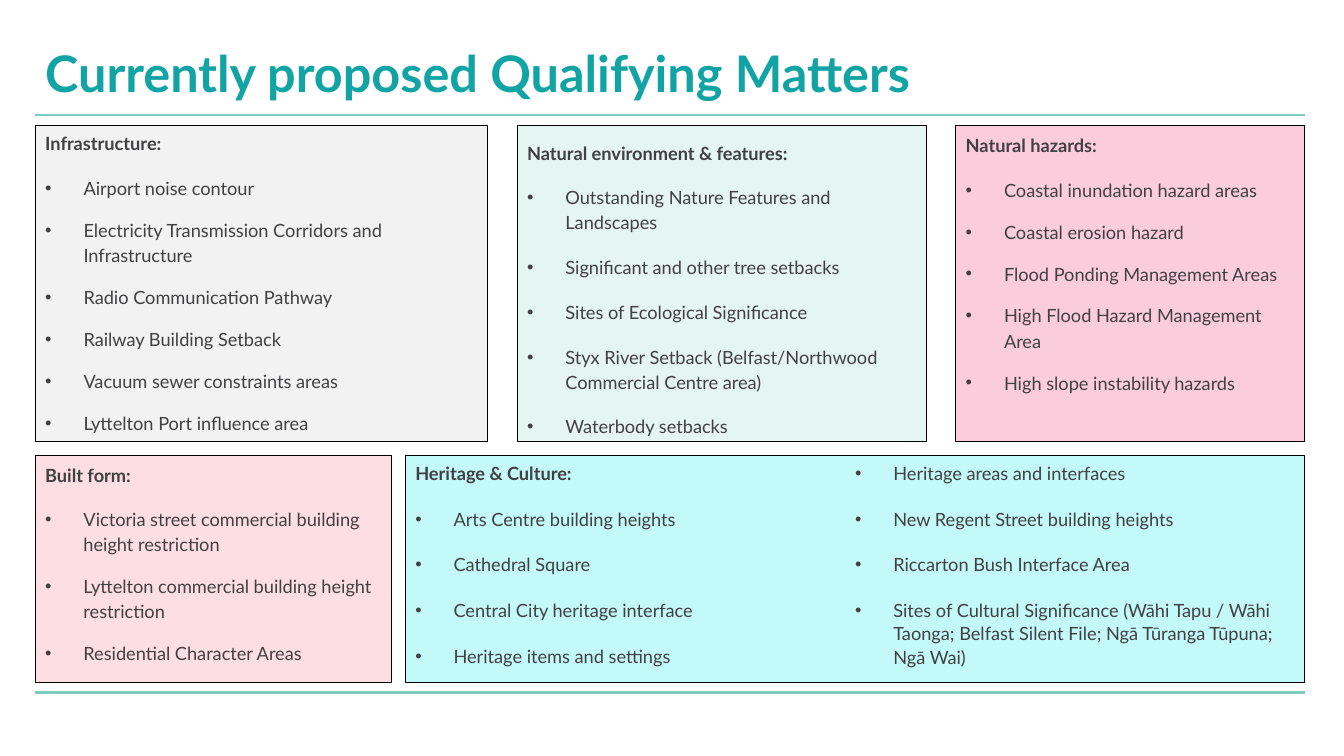
from dataclasses import dataclass

from lxml import etree
from pptx import Presentation
from pptx import util as u
from pptx.dml import color
from pptx.enum import shapes, text
from pptx.oxml import ns

PX = 9144  # EMU per px, 100 px to the inch
LEFT, RIGHT = 35, 1294
TOP_ROW, TOP_HEIGHT = 125, 313
LOW_ROW, LOW_HEIGHT = 452, 225
RULE_YS = (114, 687)
INDENT = 38
COLOURS = {
    "rule": "7CCCBF", "title": "12A4A4", "body": "414042", "border": "000000",
    "infrastructure": "F2F2F2", "environment": "E5F5F2", "hazards": "FBCDDC",
    "built": "FCDEE3", "heritage": "C4F9F9",
}


@dataclass(frozen=True)
class Panel:
    heading: str
    matters: tuple[str, ...]
    fill: str
    left: int
    top: int
    width: int
    height: int
    heading_spacing: float = 1.15
    matter_spacing: float = 1.15
    before: int = 6
    after: int = 6
    columns: int = 1


PANELS = (
    Panel("Infrastructure:", (
        "Airport noise contour",
        "Electricity Transmission Corridors and Infrastructure",
        "Radio Communication Pathway",
        "Railway Building Setback",
        "Vacuum sewer constraints areas",
        "Lyttelton Port influence area",
    ), "infrastructure", LEFT, TOP_ROW, 449, TOP_HEIGHT, heading_spacing=1.07),
    Panel("Natural environment & features:", (
        "Outstanding Nature Features and Landscapes",
        "Significant and other tree setbacks",
        "Sites of Ecological Significance",
        "Styx River Setback (Belfast/Northwood Commercial Centre area)",
        "Waterbody setbacks",
    ), "environment", 513, TOP_ROW, 406, TOP_HEIGHT, heading_spacing=1.5, after=8),
    Panel("Natural hazards:", (
        "Coastal inundation hazard areas",
        "Coastal erosion hazard",
        "Flood Ponding Management Areas",
        "High Flood Hazard Management Area",
        "High slope instability hazards",
    ), "hazards", 948, TOP_ROW, 346, TOP_HEIGHT),
    Panel("Built form:", (
        "Victoria street commercial building height restriction",
        "Lyttelton commercial building height restriction",
        "Residential Character Areas",
    ), "built", LEFT, LOW_ROW, 353, LOW_HEIGHT),
    Panel("Heritage & Culture:", (
        "Arts Centre building heights",
        "Cathedral Square",
        "Central City heritage interface",
        "Heritage items and settings",
        "Heritage areas and interfaces",
        "New Regent Street building heights",
        "Riccarton Bush Interface Area",
        "Sites of Cultural Significance (Wāhi Tapu / Wāhi Taonga; "
        "Belfast Silent File; Ngā Tūranga Tūpuna; Ngā Wai)",
    ), "heritage", 402, LOW_ROW, 892, LOW_HEIGHT, heading_spacing=1.07,
        matter_spacing=1.07, before=8, after=8, columns=2),
)


def emu(*lengths: int) -> list[int]:
    return [length * PX for length in lengths]


def rgb(name: str) -> color.RGBColor:
    return color.RGBColor.from_string(COLOURS[name])


def apply(target, formats: dict) -> None:
    for attribute, value in formats.items():
        setattr(target, attribute, value)


def write(paragraph, wording: str, size: int, colour: str, bold: bool, spacing: dict) -> None:
    apply(paragraph, {"alignment": text.PP_ALIGN.LEFT, **spacing})
    run = paragraph.add_run()
    run.text = wording
    apply(run.font, {"name": "Lato", "size": u.Pt(size), "bold": bold})
    run.font.color.rgb = rgb(colour)


def add_bullet(paragraph) -> None:
    properties = paragraph._p.get_or_add_pPr()
    properties.set("marL", str(INDENT * PX))
    properties.set("indent", str(-INDENT * PX))
    etree.SubElement(properties, ns.qn("a:buFont")).set("typeface", "Arial")
    etree.SubElement(properties, ns.qn("a:buChar")).set("char", "•")


def add_rule(slide, y: int) -> None:
    rule = slide.shapes.add_connector(shapes.MSO_CONNECTOR.STRAIGHT, *emu(LEFT, y, RIGHT, y))
    rule.line.color.rgb = rgb("rule")
    rule.line.width = u.Pt(1.5)
    etree.SubElement(rule._element.spPr, ns.qn("a:effectLst"))


def add_title(slide, wording: str) -> None:
    frame = slide.shapes.add_textbox(*emu(LEFT, 40, 1260, 72)).text_frame
    apply(frame, {"word_wrap": True, "vertical_anchor": text.MSO_ANCHOR.MIDDLE})
    write(frame.paragraphs[0], wording, 36, "title", True, {"line_spacing": 0.9})


def add_panel(slide, panel: Panel) -> None:
    box = slide.shapes.add_shape(
        shapes.MSO_SHAPE.RECTANGLE, *emu(panel.left, panel.top, panel.width, panel.height))
    box.shadow.inherit = False
    box.fill.solid()
    box.fill.fore_color.rgb = rgb(panel.fill)
    box.line.color.rgb = rgb("border")
    box.line.width = u.Pt(0.75)
    frame = box.text_frame
    apply(frame, {"word_wrap": True, "vertical_anchor": text.MSO_ANCHOR.TOP})
    if panel.columns > 1:
        frame._txBody.bodyPr.set("numCol", str(panel.columns))
    write(frame.paragraphs[0], panel.heading, 13, "body", True,
          {"line_spacing": panel.heading_spacing, "space_after": u.Pt(8)})
    matter_format = {"line_spacing": panel.matter_spacing,
                     "space_before": u.Pt(panel.before), "space_after": u.Pt(panel.after)}
    for matter in panel.matters:
        paragraph = frame.add_paragraph()
        add_bullet(paragraph)
        write(paragraph, matter, 13, "body", False, matter_format)


def main() -> None:
    deck = Presentation()
    deck.slide_width, deck.slide_height = emu(1333, 750)
    slide = deck.slides.add_slide(deck.slide_layouts[6])
    for y in RULE_YS:
        add_rule(slide, y)
    add_title(slide, "Currently proposed Qualifying Matters")
    for panel in PANELS:
        add_panel(slide, panel)
    deck.save("out.pptx")


if __name__ == "__main__":
    main()
